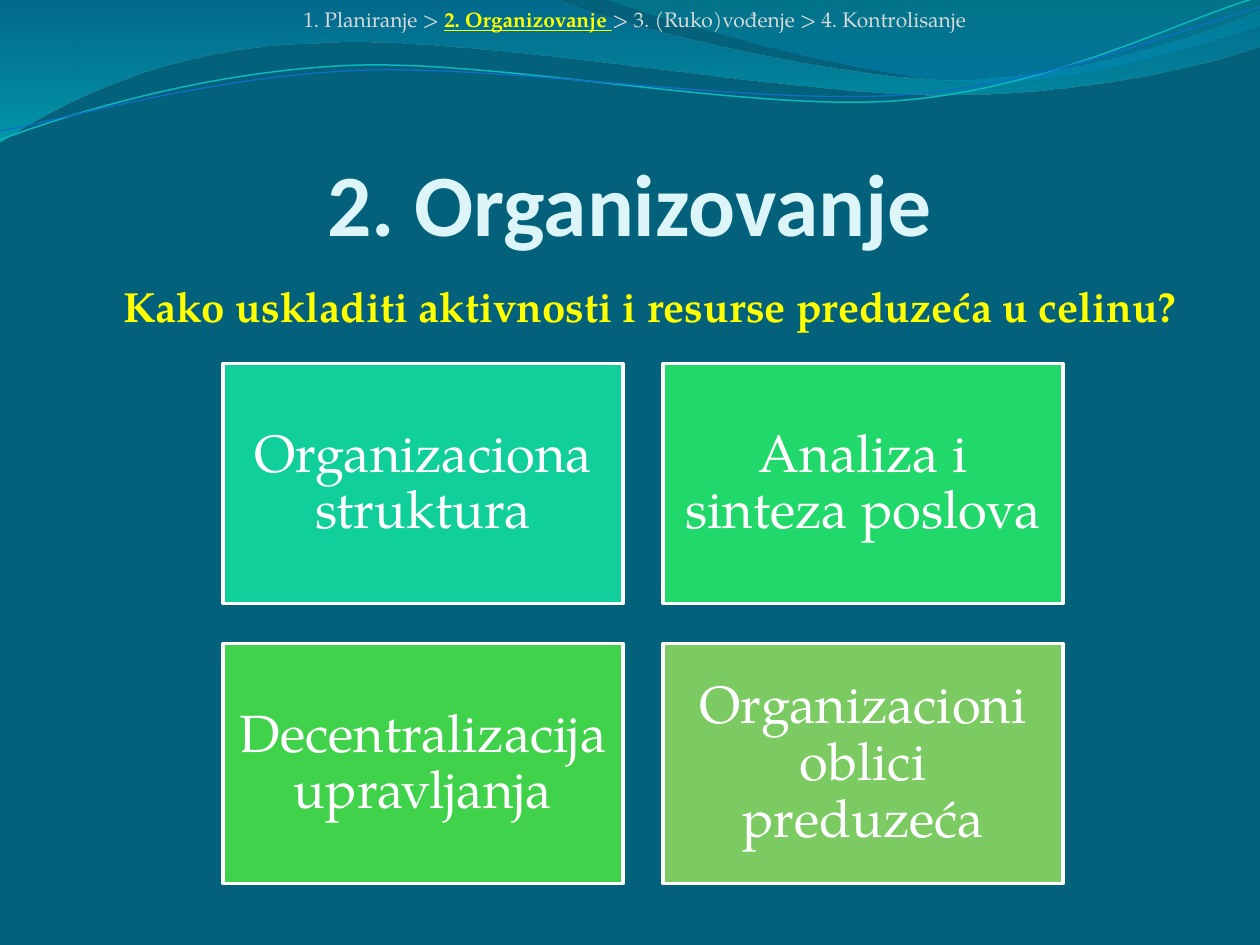
from lxml.etree import SubElement
from pptx import Presentation
from pptx.dml.color import RGBColor
from pptx.enum.shapes import MSO_SHAPE as Shape
from pptx.enum.text import MSO_ANCHOR as Anchor, PP_ALIGN as Align
from pptx.oxml.ns import qn
from pptx.util import Cm, Pt

SERIF, SANS = "TeX Gyre Pagella", "Calibri"
WHITE, GREY, YELLOW, ICE = "FFFFFF", "D9D9D9", "FFFF00", "DBF5F9"

# Each part after the first point is a line (x, y) or a Bezier (x1, y1, x2, y2, x, y), in cm.
WIDE_WAVE = [(0, 0), (11.18, -0.03), (12.09, 0.43, 16.87, 1.6, 19.25, 1.6),
             (21.67, 1.6, 24.33, 0.66, 25.4, 0.23), (25.43, 0.91),
             (24.97, 1.12, 22.1, 1.93, 18.95, 1.91),
             (15.8, 1.91, 9.7, 0.71, 6.53, 0.86),
             (3.28, 0.91, 1.17, 2.11, -0.03, 2.87), (0, 0)]
RIGHT_WAVE = [(12.17, -0.03), (12.93, 0.28, 17.32, 1.57, 19.53, 1.65),
              (21.74, 1.75, 24.41, 0.81, 25.4, 0.53), (25.4, 0), (12.17, -0.03)]
TEAL_STRAND = [(0, 2.82), (1.22, 2.36, 4.01, 1.45, 7.04, 1.32),
               (10.03, 1.19, 15.06, 2.26, 18.11, 2.03),
               (21.16, 1.8, 23.83, 0.38, 25.35, -0.05)]
BLUE_STRAND = [(0, 2.64), (1.19, 2.44, 4.17, 1.55, 7.19, 1.42),
               (10.24, 1.3, 15.16, 2.13, 18.21, 1.91),
               (21.23, 1.7, 23.9, 0.53, 25.4, 0.15)]

CARDS = [("Organizaciona struktura", "10CF9B"),
         ("Analiza i sinteza poslova", "21D86A"),
         ("Decentralizacija upravljanja", "41D24C"),
         ("Organizacioni oblici preduzeća", "7CCA62")]


def rgb(color):
    return RGBColor.from_string(color)


def add_outline(slide, outline, close):
    """Build the outline through all its points, then join each Bezier's three into a curve."""
    first, *points = [(Cm(part[i]), Cm(part[i + 1]))
                      for part in outline for i in range(0, len(part), 2)]
    builder = slide.shapes.build_freeform(*first)
    builder.add_line_segments(points, close=close)
    shape = builder.convert_to_shape()
    shape.shadow.inherit = False

    segments = iter(list(shape.element.spPr.iter(qn("a:lnTo"))))
    for part in outline[1:]:
        segment = next(segments)
        if len(part) == 6:
            segment.tag = qn("a:cubicBezTo")
            for _ in range(2):
                extra = next(segments)
                segment.append(extra[0])
                extra.getparent().remove(extra)
    return shape


def add_wave(slide, outline, stops):
    """Add a translucent top-to-bottom gradient; stops are (position, color, opacity %)."""
    wave = add_outline(slide, outline, True)
    wave.line.fill.background()
    wave.fill.gradient()
    wave.fill.gradient_angle = 270
    for stop, (position, color, _) in zip(wave.fill.gradient_stops, stops):
        stop.position = position
        stop.color.rgb = rgb(color)
    for node, (_, _, opacity) in zip(wave.element.spPr.iter(qn("a:srgbClr")), stops):
        SubElement(node, qn("a:alpha"), val=str(opacity * 1000))


def add_strand(slide, outline, color, width):
    strand = add_outline(slide, outline, False)
    strand.fill.background()
    strand.line.color.rgb = rgb(color)
    strand.line.width = Pt(width)


def write(shape, runs, size, font=SERIF, line_spacing=None, **frame_format):
    """Fill a shape with one centred paragraph; runs are (text, color, font format)."""
    frame = shape.text_frame
    for key, value in {"word_wrap": True, **frame_format}.items():
        setattr(frame, key, value)
    paragraph = frame.paragraphs[0]
    paragraph.alignment = Align.CENTER
    paragraph.line_spacing = line_spacing
    for text, color, extra in runs:
        run = paragraph.add_run()
        run.text = text
        run.font.color.rgb = rgb(color)
        for key, value in {"name": font, "size": Pt(size), **extra}.items():
            setattr(run.font, key, value)


def add_text(slide, box, runs, size, **options):
    write(slide.shapes.add_textbox(*map(Cm, box)), runs, size, **options)


def add_card(slide, index, label, color):
    row, column = divmod(index, 2)
    card = slide.shapes.add_shape(
        Shape.RECTANGLE, Cm(4.5 + 8.87 * column), Cm(7.33 + 5.64 * row),
        Cm(8.06), Cm(4.84))
    card.shadow.inherit = False
    card.fill.solid()
    card.fill.fore_color.rgb = rgb(color)
    card.line.color.rgb = rgb(WHITE)
    card.line.width = Pt(2)
    margins = {f"margin_{side}": Cm(0.3) for side in ("left", "top", "right", "bottom")}
    write(card, [(label, WHITE, {})], 30, line_spacing=0.9,
          vertical_anchor=Anchor.MIDDLE, **margins)


def main():
    deck = Presentation()
    deck.slide_width, deck.slide_height = Cm(25.4), Cm(19.05)
    slide = deck.slides.add_slide(deck.slide_layouts[6])
    slide.background.fill.solid()
    slide.background.fill.fore_color.rgb = rgb("04617B")

    add_wave(slide, WIDE_WAVE, [(0, "0074A1", 45), (1, "00C6CF", 55)])
    add_wave(slide, RIGHT_WAVE, [(0, "00A1A9", 30), (0.8, "008BBF", 45)])
    add_strand(slide, TEAL_STRAND, "0AB8BF", 0.85)
    add_strand(slide, BLUE_STRAND, "0F6FC6", 0.75)

    add_text(slide, (0.1, 0, 25.4, 0.76), [
        ("1. Planiranje > ", GREY, {}),
        ("2. Organizovanje ", YELLOW, {"bold": True, "underline": True}),
        ("> 3. (Ruko)vođenje > 4. Kontrolisanje", GREY, {})], 12)
    add_text(slide, (1.27, 1.96, 22.86, 3.17),
             [("2. Organizovanje", ICE, {"bold": True})], 50, font=SANS,
             vertical_anchor=Anchor.BOTTOM,
             margin_left=0, margin_right=0, margin_bottom=0)
    add_text(slide, (1.3, 5.54, 23.6, 1.27),
             [("Kako uskladiti aktivnosti i resurse preduzeća u celinu?",
               YELLOW, {"bold": True})], 24)

    for index, (label, color) in enumerate(CARDS):
        add_card(slide, index, label, color)
    deck.save("out.pptx")


if __name__ == "__main__":
    main()
